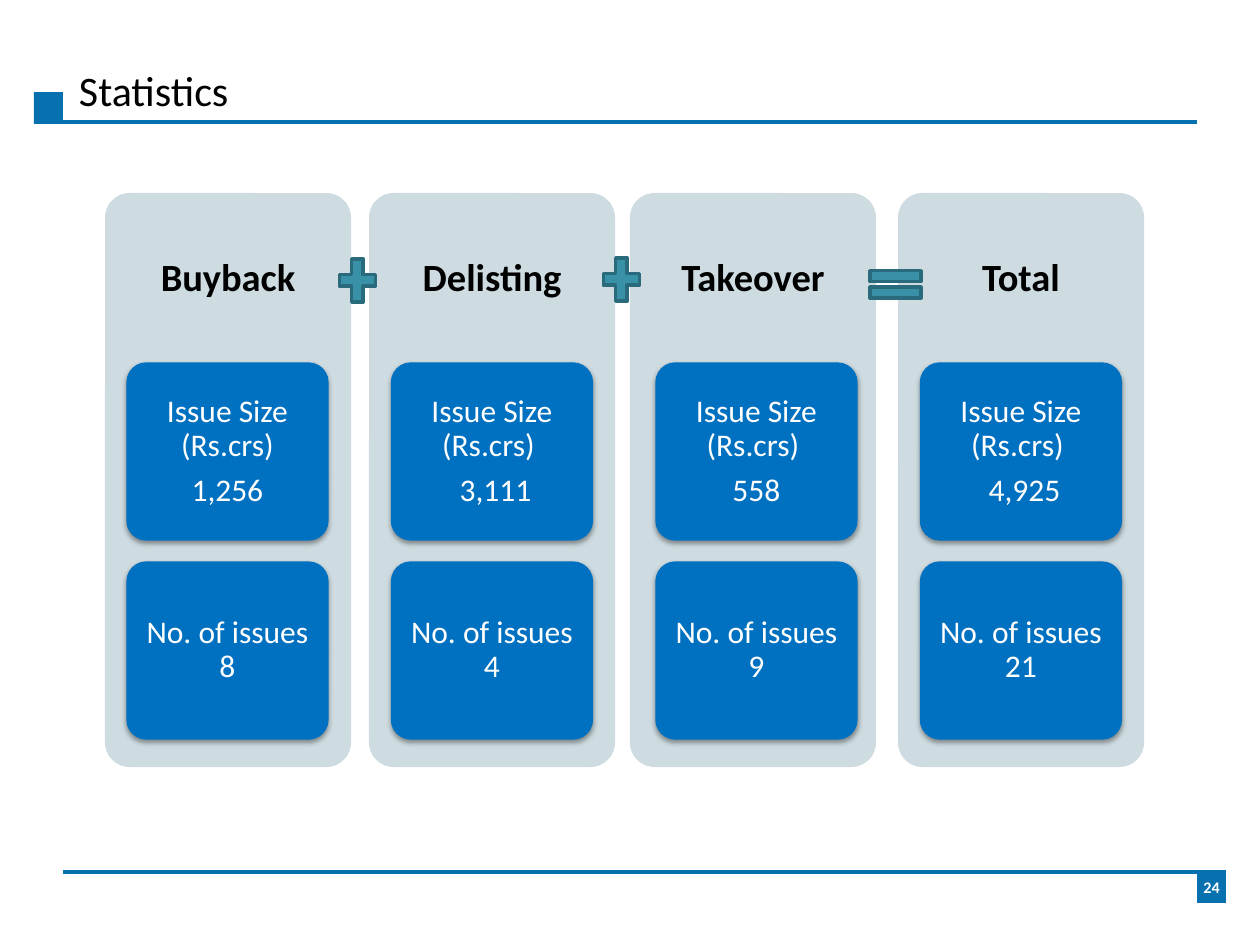
import pptx
import pptx.util
import pptx.oxml
import pptx.dml.color
import pptx.enum.shapes
import pptx.enum.text
from lxml import etree

PX = 914400 / 126
SHAPE = pptx.enum.shapes.MSO_SHAPE
ALIGN = pptx.enum.text.PP_ALIGN
ANCHOR = pptx.enum.text.MSO_ANCHOR
A = "http://schemas.openxmlformats.org/drawingml/2006/main"
COLORS = {
    "rule": "0771B0",
    "panel": "CEDCE1",
    "card": "0070C0",
    "sign": "3891A7",
    "sign_line": "296B7C",
    "black": "000000",
    "white": "FFFFFF",
}
COLUMNS = [
    (105, "Buyback", "Issue Size (Rs.crs)", "1,256", "8"),
    (369, "Delisting", "Issue Size (Rs.crs) ", " 3,111", "4"),
    (630, "Takeover", "Issue Size (Rs.crs) ", "558", "9"),
    (898, "Total", "Issue Size (Rs.crs) ", " 4,925", "21"),
]
SIGNS = [
    (SHAPE.MATH_PLUS, 333, 251, 49, 59),
    (SHAPE.MATH_PLUS, 597, 250, 49, 59),
    (SHAPE.MATH_EQUAL, 861, 261, 69, 47),
]


def px(n):
    return pptx.util.Emu(round(n * PX))


def rgb(name):
    return pptx.dml.color.RGBColor.from_string(COLORS[name])


def set_text(sp, *lines, size=18, color="white", bold=False, align=ALIGN.CENTER,
             anchor=ANCHOR.MIDDLE, inset=(0, 0), wrap=True, spacing=None, after=0):
    tf = sp.text_frame
    tf.word_wrap = wrap
    tf.vertical_anchor = anchor
    tf.margin_left = tf.margin_right = px(inset[0])
    tf.margin_top = tf.margin_bottom = px(inset[1])
    for i, line in enumerate(lines):
        p = tf.add_paragraph() if i else tf.paragraphs[0]
        p.alignment = align
        p.line_spacing = spacing
        p.space_after = pptx.util.Pt(after)
        r = p.add_run()
        r.text = line
        r.font.name = "Calibri"
        r.font.size = pptx.util.Pt(size)
        r.font.bold = bold
        r.font.color.rgb = rgb(color)


def add_box(s, kind, x, y, w, h, fill, line=None, width=0):
    sp = s.shapes.add_shape(kind, px(x), px(y), px(w), px(h))
    sp.shadow.inherit = False
    sp.fill.solid()
    sp.fill.fore_color.rgb = rgb(fill)
    if line:
        sp.line.color.rgb = rgb(line)
        sp.line.width = pptx.util.Pt(width)
    else:
        sp.line.fill.background()
    if kind == SHAPE.ROUNDED_RECTANGLE:
        sp.adjustments[0] = 0.1
    return sp


def add_rule(s, x1, x2, y):
    c = s.shapes.add_connector(pptx.enum.shapes.MSO_CONNECTOR.STRAIGHT,
                               px(x1), px(y), px(x2), px(y))
    c.line.color.rgb = rgb("rule")
    c.line.width = pptx.util.Pt(2.5)
    etree.SubElement(c._element.spPr, f"{{{A}}}effectLst")


def add_shadow(sp):
    effects = sp._element.spPr.find(f"{{{A}}}effectLst")
    effects.append(pptx.oxml.parse_xml(
        f'<a:outerShdw xmlns:a="{A}" blurRad="39370" dist="20320" dir="5400000" '
        'rotWithShape="0"><a:srgbClr val="000000"><a:alpha val="38000"/>'
        '</a:srgbClr></a:outerShdw>'))


def add_card(s, x, y, *lines):
    sp = add_box(s, SHAPE.ROUNDED_RECTANGLE, x, y, 197, 173, "card", "card", 3)
    add_shadow(sp)
    set_text(sp, *lines, inset=(6, 5), spacing=0.9, after=6.3)


def add_column(s, i, x, name, label, amount, count):
    add_box(s, SHAPE.ROUNDED_RECTANGLE, x, 193, 246, 574, "panel")
    heading = s.shapes.add_textbox(px(x), px(193), px(246), px(172))
    set_text(heading, name, size=22, color="black", bold=True,
             inset=(11, 11), spacing=0.9, after=7.7)
    card_x = 129 + 1058 * i / 4
    add_card(s, card_x, 365, label, amount)
    add_card(s, card_x, 564, f"No. of issues {count}")


def add_title(s, text):
    sp = s.shapes.title
    sp.left, sp.top, sp.width, sp.height = px(66), px(58), px(735), px(63)
    set_text(sp, text, size=24, color="black", align=ALIGN.LEFT,
             anchor=ANCHOR.TOP, inset=(13, 6))


def main():
    prs = pptx.Presentation()
    prs.slide_width, prs.slide_height = px(1260), px(945)
    s = prs.slides.add_slide(prs.slide_layouts[5])
    add_rule(s, 34, 1197, 122)
    add_box(s, SHAPE.RECTANGLE, 34, 92, 29, 31, "rule")
    add_rule(s, 63, 1226, 872)
    add_title(s, "Statistics")
    for i, column in enumerate(COLUMNS):
        add_column(s, i, *column)
    for sign in SIGNS:
        add_box(s, *sign, "sign", "sign_line", 2)
    number = add_box(s, SHAPE.RECTANGLE, 1197, 872, 29, 31, "rule")
    set_text(number, "24", size=9.2, bold=True, wrap=False)
    prs.save("out.pptx")


if __name__ == "__main__":
    main()
